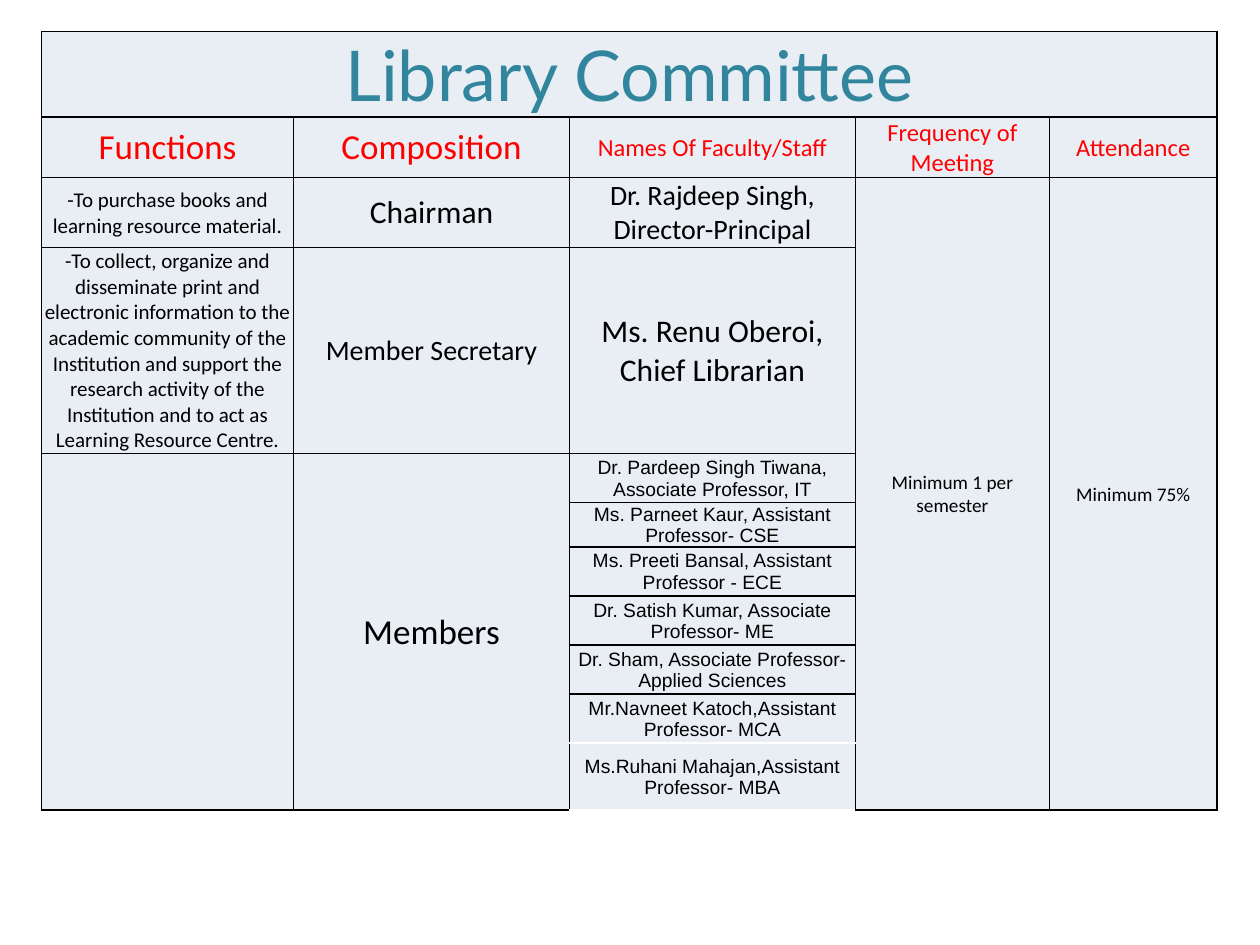
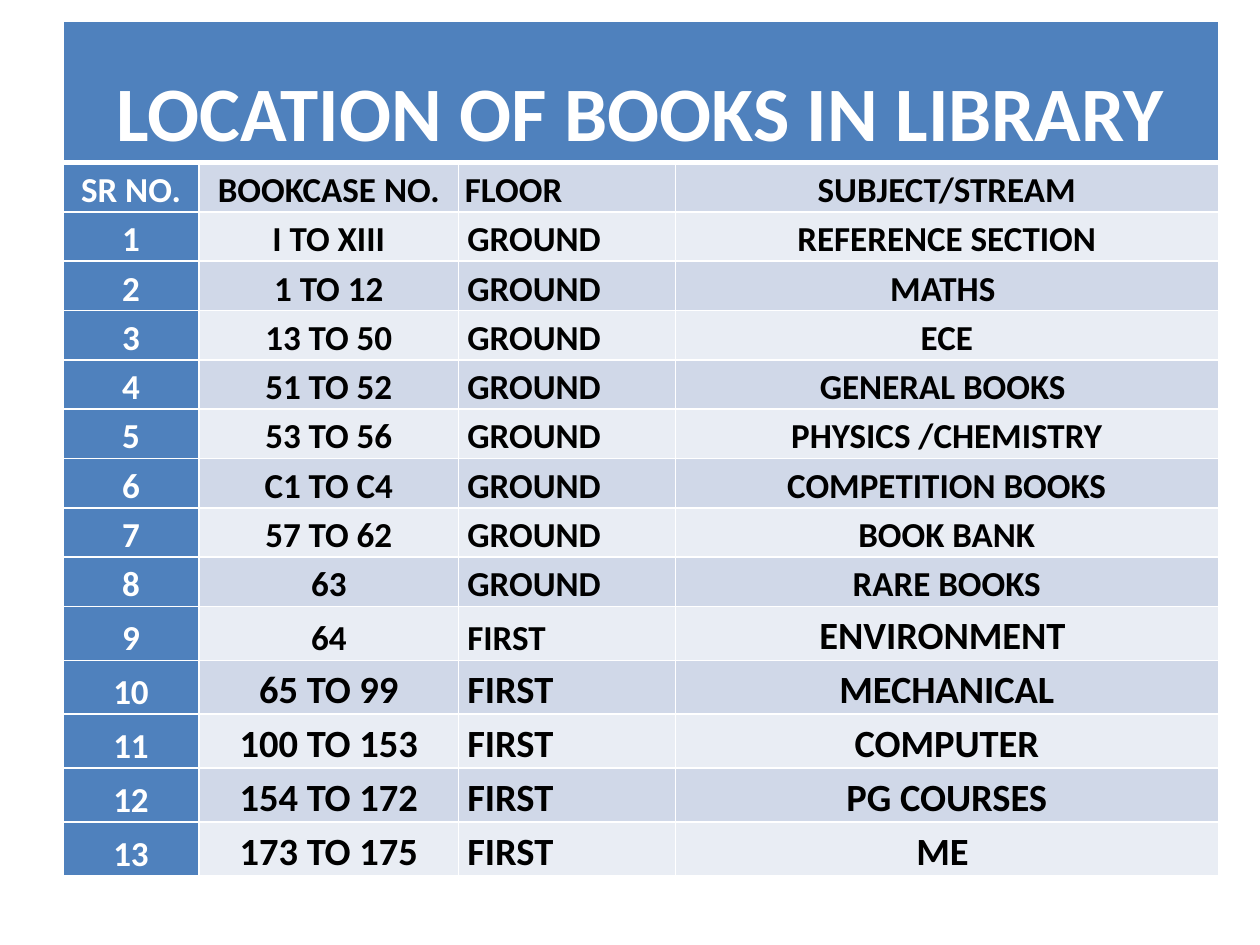
from lxml import etree
from pptx import Presentation
from pptx.dml.color import RGBColor
from pptx.enum import text
from pptx.oxml import ns
from pptx import util as u

COLORS = {
    "black": "000000",
    "white": "FFFFFF",
    "red": "FF0000",
    "teal": "31859C",
    "blue": "4F81BD",
    "band": "D0D8E8",
    "pale": "E9EDF4",
}

COMMITTEE_HEADINGS = [
    ("Functions", 20),
    ("Composition", 20),
    ("Names Of Faculty/Staff", 14),
    ("Frequency of Meeting", 14),
    ("Attendance", 14),
]
COMMITTEE_OFFICERS = [
    [
        ("-To purchase books and learning resource material.", 12),
        ("Chairman", 18),
        ("Dr. Rajdeep Singh, Director-Principal", 16),
        ("Minimum 1 per semester", 11),
        ("Minimum 75%", 11),
    ],
    [
        ("-To collect, organize and disseminate print and electronic information "
         "to the academic community of the Institution and support the research "
         "activity of the Institution and to act as Learning Resource Centre.", 12),
        ("Member Secretary", 16),
        ("Ms. Renu Oberoi, Chief Librarian", 18),
    ],
]
COMMITTEE_MEMBERS = [
    "Dr. Pardeep Singh Tiwana, Associate Professor, IT",
    "Ms. Parneet Kaur, Assistant Professor- CSE",
    "Ms. Preeti Bansal, Assistant Professor - ECE",
    "Dr. Satish Kumar, Associate Professor- ME",
    "Dr. Sham, Associate Professor-Applied Sciences",
    "Mr.Navneet Katoch,Assistant Professor- MCA",
    "Ms.Ruhani Mahajan,Assistant Professor- MBA",
]
BOOKCASES = [
    ("I TO XIII", "GROUND", "REFERENCE SECTION"),
    ("1 TO 12", "GROUND", "MATHS "),
    ("13 TO 50", "GROUND", "ECE"),
    ("51 TO 52", "GROUND", "GENERAL BOOKS "),
    ("53 TO 56", "GROUND", "PHYSICS /CHEMISTRY"),
    ("C1 TO C4", "GROUND", "COMPETITION BOOKS"),
    ("57 TO 62", "GROUND", "BOOK BANK"),
    ("63", "GROUND", "RARE BOOKS"),
    ("64", "FIRST", "ENVIRONMENT "),
    ("65 TO 99", "FIRST", "MECHANICAL"),
    ("100 TO 153", "FIRST", "COMPUTER"),
    ("154 TO 172", "FIRST", "PG COURSES"),
    ("173 TO 175", "FIRST", "ME "),
]


class LibraryDeck:
    """Hold the shared style and the current slide; lengths are percentages of it."""

    def __init__(self):
        self.deck = Presentation()
        self.deck.slide_width, self.deck.slide_height = u.Inches(10), u.Inches(7.5)
        self.page = None

    def across(self, share):
        return round(self.deck.slide_width * share / 100)

    def down(self, share):
        return round(self.deck.slide_height * share / 100)

    def add_page(self):
        self.page = self.deck.slides.add_slide(self.deck.slide_layouts[6])

    def add_grid(self, left, top, columns, rows):
        table = self.page.shapes.add_table(
            len(rows), len(columns), self.across(left), self.down(top),
            self.across(sum(columns)), self.down(sum(rows))).table
        table.first_row = table.horz_banding = False
        for column, share in zip(table.columns, columns):
            column.width = self.across(share)
        for row, share in zip(table.rows, rows):
            row.height = self.down(share)
        return table

    def paint(self, cell, fill, sides):
        cell.fill.solid()
        cell.fill.fore_color.rgb = RGBColor.from_string(COLORS[fill])
        properties = cell._tc.get_or_add_tcPr()
        for index, side in enumerate("LRTB"):
            color, points = sides[side]
            line = etree.Element(ns.qn(f"a:ln{side}"), w=str(u.Pt(points)))
            solid = etree.SubElement(line, ns.qn("a:solidFill"))
            etree.SubElement(solid, ns.qn("a:srgbClr"), val=COLORS[color])
            properties.insert(index, line)

    def label(self, cell, words, size, color="black", font="Calibri", bold=False,
              align=text.PP_ALIGN.CENTER, anchor=text.MSO_ANCHOR.MIDDLE,
              inset=0.01, top=0.01, spacing=None):
        cell.margin_left = cell.margin_right = u.Inches(inset)
        cell.margin_top, cell.margin_bottom = u.Inches(top), 0
        cell.vertical_anchor = anchor
        cell.text_frame.text = words
        para = cell.text_frame.paragraphs[0]
        para.alignment = align
        if spacing:
            para.line_spacing = spacing
        for span in para.runs:
            span.font.name, span.font.size, span.font.bold = font, u.Pt(size), bold
            span.font.color.rgb = RGBColor.from_string(COLORS[color])

    def save(self):
        self.deck.save("out.pptx")


def edges(color, **changes):
    return {**dict.fromkeys("LRTB", (color, 1)), **changes}


def build_committee(library):
    library.add_page()
    table = library.add_grid(
        3.3, 3.33, [20, 21.9, 22.7, 15.4, 13.3],
        [8.8, 6.13, 7.07, 20.93, 5.2, 4.67] + [5.2] * 4 + [7.07])
    last = len(table.rows) - 1
    white = ("white", 1)
    member_sides = {
        (last - 1, 2): edges("black", B=white),
        (last, 2): edges("black", T=white, B=white),
    }
    for row in range(last + 1):
        for column in range(5):
            sides = member_sides.get((row, column), edges("black"))
            library.paint(table.cell(row, column), "pale", sides)

    table.cell(0, 0).merge(table.cell(0, 4))
    for column, first in enumerate([4, 4, None, 2, 2]):
        if first:
            table.cell(first, column).merge(table.cell(last, column))

    library.label(table.cell(0, 0), "Library Committee", 40, "teal", "Lato")
    for row, entries in enumerate([COMMITTEE_HEADINGS] + COMMITTEE_OFFICERS, 1):
        for column, (words, size) in enumerate(entries):
            color = "red" if row == 1 else "black"
            library.label(table.cell(row, column), words, size, color)
    library.label(table.cell(4, 1), "Members", 20)
    for row, member in enumerate(COMMITTEE_MEMBERS, 4):
        library.label(table.cell(row, 2), member, 11, font="Arial")


def bookcase_size(row, column):
    return 22 if (row > 10 and column) or (row, column) == (10, 3) else 20


def build_locations(library):
    library.add_page()
    table = library.add_grid(
        5, 2.27, [10.8, 20.6, 17.2, 43.1],
        [14.4, 4.93] + [4.67, 5.07] * 4 + [4.67] + [5.47, 5.2] * 2)
    style = {"bold": True, "anchor": text.MSO_ANCHOR.BOTTOM, "top": 0}
    for column in range(4):
        library.paint(table.cell(0, column), "blue", edges("white", B=("white", 3)))
    table.cell(0, 0).merge(table.cell(0, 3))
    library.label(table.cell(0, 0), "LOCATION OF BOOKS IN LIBRARY", 44, "white",
                  inset=0.05, spacing=1.5, **style)

    entries = [("SR NO.", "BOOKCASE NO.", "FLOOR", "SUBJECT/STREAM")]
    entries += [(str(number), *case) for number, case in enumerate(BOOKCASES, 1)]
    for row, entry in enumerate(entries, 1):
        top_side = ("white", 3 if row == 1 else 1)
        for column, words in enumerate(entry):
            cell = table.cell(row, column)
            fill = "blue" if column == 0 else "band" if row % 2 else "pale"
            library.paint(cell, fill, edges("white", T=top_side))
            library.label(
                cell, words, bookcase_size(row, column),
                "black" if column else "white",
                align=text.PP_ALIGN.LEFT if column == 2 else text.PP_ALIGN.CENTER,
                inset=0.07 if row > 1 and column else 0.05,
                spacing=1.15, **style)


def main():
    library = LibraryDeck()
    build_committee(library)
    build_locations(library)
    library.save()


if __name__ == "__main__":
    main()
